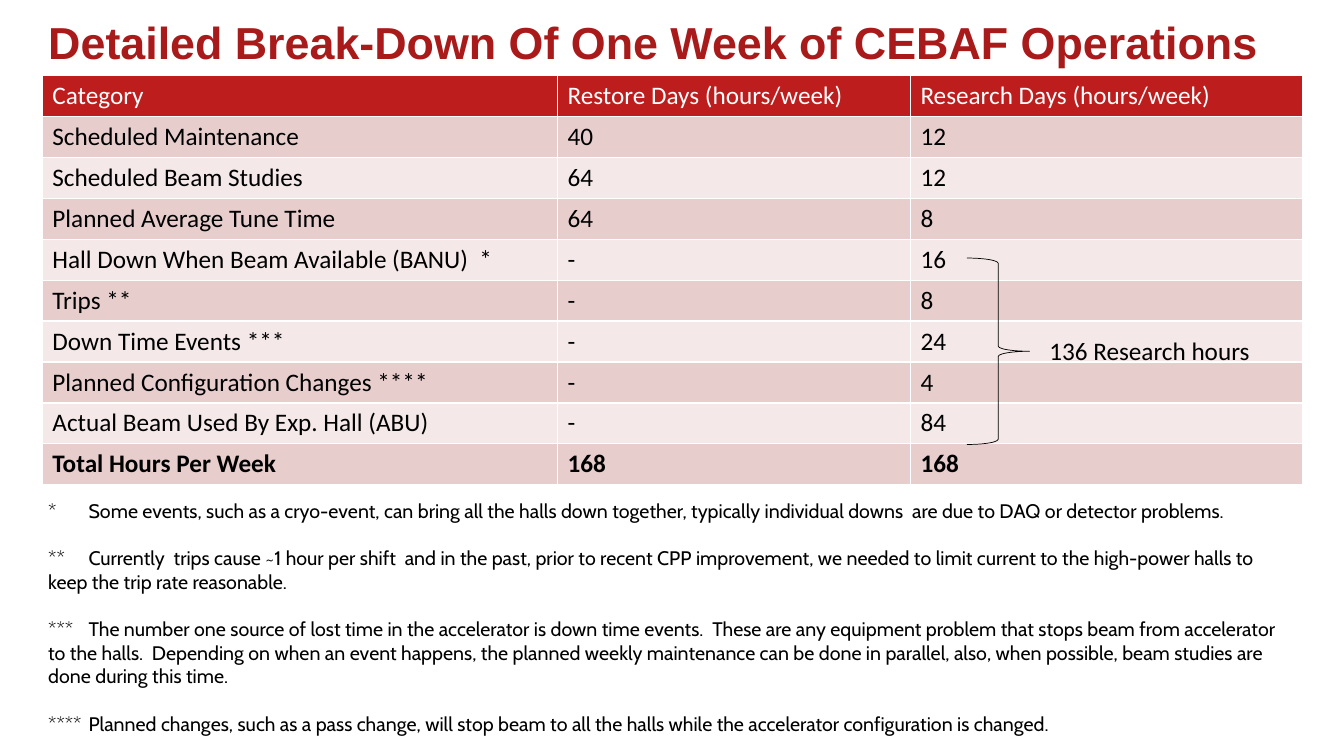
import pptx
import pptx.dml.color
import pptx.enum.shapes
import pptx.enum.text
import pptx.oxml.ns
import pptx.util
from lxml import etree

Inches = pptx.util.Inches
Pt = pptx.util.Pt
RGBColor = pptx.dml.color.RGBColor
Anchor = pptx.enum.text.MSO_ANCHOR

BLACK = RGBColor(0x00, 0x00, 0x00)
WHITE = RGBColor(0xFF, 0xFF, 0xFF)
TITLE_RED = RGBColor(0xA9, 0x1B, 0x1B)
HEADER_RED = RGBColor(0xBE, 0x1D, 0x1D)
BAND_FILLS = (RGBColor(0xF4, 0xE8, 0xE8), RGBColor(0xE8, 0xCD, 0xCD))

COLUMN_WIDTHS = (5.11, 3.5, 3.89)
WEEK_HOURS = (
    ("Category", "Restore Days (hours/week)", "Research Days (hours/week)"),
    ("Scheduled Maintenance", "40", "12"),
    ("Scheduled Beam Studies", "64", "12"),
    ("Planned Average Tune Time", "64", "8"),
    ("Hall Down When Beam Available (BANU)  *", "-", "16"),
    ("Trips **", "-", "8"),
    ("Down Time Events ***", "-", "24"),
    ("Planned Configuration Changes ****", "-", "4"),
    ("Actual Beam Used By Exp. Hall (ABU)", "-", "84"),
    ("Total Hours Per Week", "168", "168"),
)
FOOTNOTES = (
    "Some events, such as a cryo-event, can bring all the halls down together, "
    "typically individual downs  are due to DAQ or detector problems.",
    "Currently  trips cause ~1 hour per shift  and in the past, prior to recent CPP "
    "improvement, we needed to limit current to the high-power halls to keep the "
    "trip rate reasonable.",
    "The number one source of lost time in the accelerator is down time events.  "
    "These are any equipment problem that stops beam from accelerator to the halls.  "
    "Depending on when an event happens, the planned weekly maintenance can be done "
    "in parallel, also, when possible, beam studies are done during this time.",
    "Planned changes, such as a pass change, will stop beam to all the halls while "
    "the accelerator configuration is changed.",
)


class SlideBuilder:
    title_font = "Arial"
    table_font = "Calibri"
    note_font = "Cabin"

    def __init__(self, slide):
        self.slide = slide

    def format_runs(self, text_frame, font_name, size, color, bold=False):
        for paragraph in text_frame.paragraphs:
            for run in paragraph.runs:
                run.font.name = font_name
                run.font.size = Pt(size)
                run.font.color.rgb = color
                run.font.bold = bold

    def add_text(self, text, box, font_name, size, color, bold=False):
        text_box = self.slide.shapes.add_textbox(*map(Inches, box))
        text_frame = text_box.text_frame
        text_frame.word_wrap = True
        text_frame.text = text
        self.format_runs(text_frame, font_name, size, color, bold)
        return text_frame

    def add_title(self, text, box):
        text_frame = self.add_text(text, box, self.title_font, 32, TITLE_RED, bold=True)
        text_frame.vertical_anchor = Anchor.MIDDLE
        text_frame.paragraphs[0].line_spacing = 0.9

    def add_table(self, rows, column_widths, box):
        """Add a banded table with a red header row and a bold last row."""
        shape = self.slide.shapes.add_table(
            len(rows), len(column_widths), *map(Inches, box))
        table = shape.table
        for column, width in zip(table.columns, column_widths):
            column.width = Inches(width)
        for row_index, row in enumerate(rows):
            is_header = row_index == 0
            is_total = row_index == len(rows) - 1
            for column_index, text in enumerate(row):
                cell = table.cell(row_index, column_index)
                cell.text = text
                cell.fill.solid()
                cell.fill.fore_color.rgb = HEADER_RED if is_header else BAND_FILLS[row_index % 2]
                self.format_runs(cell.text_frame, self.table_font, 18,
                                 WHITE if is_header else BLACK, bold=is_total)

    def add_brace(self, box):
        brace = self.slide.shapes.add_shape(
            pptx.enum.shapes.MSO_SHAPE.RIGHT_BRACE, *map(Inches, box))
        brace.shadow.inherit = False
        brace.fill.background()
        brace.line.color.rgb = BLACK
        brace.line.width = Pt(0.5)

    def add_footnotes(self, notes, box):
        """Add notes marked with one more asterisk each, aligned at a tab stop."""
        text = "\n".join(f"{'*' * count}\t{note}" for count, note in enumerate(notes, 1))
        text_frame = self.add_text(text, box, self.note_font, 14, BLACK)
        text_frame.margin_top = Inches(0.29)
        for index, paragraph in enumerate(text_frame.paragraphs):
            paragraph.space_before = Pt(17 if index else 0)
            properties = paragraph._p.get_or_add_pPr()
            tab_list = etree.SubElement(properties, pptx.oxml.ns.qn("a:tabLst"))
            etree.SubElement(tab_list, pptx.oxml.ns.qn("a:tab"),
                             pos=str(Inches(0.4)), algn="l")


def main():
    presentation = pptx.Presentation()
    presentation.slide_width = Inches(13.33)
    presentation.slide_height = Inches(7.5)
    builder = SlideBuilder(presentation.slides.add_slide(presentation.slide_layouts[6]))

    builder.add_title("Detailed Break-Down Of One Week of CEBAF Operations",
                      (0.38, 0.18, 12.49, 0.53))
    builder.add_table(WEEK_HOURS, COLUMN_WIDTHS, (0.42, 0.75, 12.5, 4.06))
    builder.add_brace((9.59, 2.56, 0.62, 1.85))
    builder.add_text("136 Research hours", (10.31, 3.28, 2.51, 0.4),
                     builder.table_font, 18, BLACK)
    builder.add_footnotes(FOOTNOTES, (0.38, 4.66, 12.54, 2.84))
    presentation.save("out.pptx")


if __name__ == "__main__":
    main()
